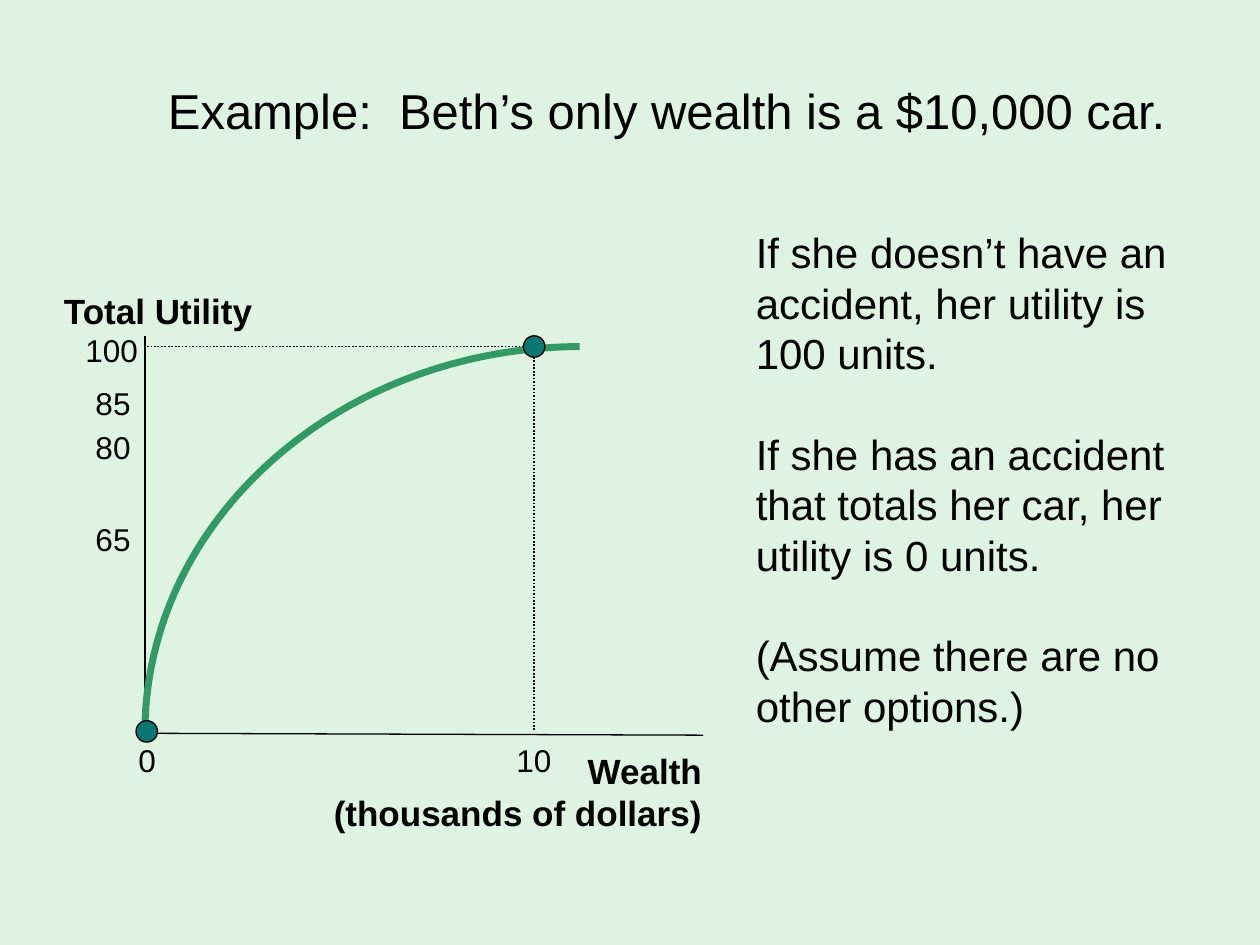
import pptx
import pptx.dml.color
import pptx.enum.dml
import pptx.enum.shapes
import pptx.enum.text
import pptx.oxml
import pptx.util

RGBColor = pptx.dml.color.RGBColor
Align = pptx.enum.text.PP_ALIGN
Anchor = pptx.enum.text.MSO_ANCHOR
Pt = pptx.util.Pt

BACKGROUND = RGBColor(0xDF, 0xF3, 0xE2)
BLACK = RGBColor(0x00, 0x00, 0x00)
CURVE_GREEN = RGBColor(0x33, 0x99, 0x66)
DOT_TEAL = RGBColor(0x0C, 0x76, 0x73)

FONT = "Arial"
LINE_HEIGHT = 1.2
WIDTH = pptx.util.Inches(10)
HEIGHT = pptx.util.Inches(7.5)
DOT_SIZE = pptx.util.Inches(0.17)
CURVE_STEPS = 80

AXIS_X, AXIS_TOP, AXIS_BOTTOM = 11.5, 35.6, 77.6
WEALTH_X, UTILITY_Y = 42.4, 36.67


def across(percent):
    return round(WIDTH * percent / 100)


def down(percent):
    return round(HEIGHT * percent / 100)


def add_text(slide, text, left, top, width, height, *, size, bold=False,
             align=Align.LEFT, anchor=Anchor.TOP, gap=0):
    box = slide.shapes.add_textbox(across(left), down(top), across(width), down(height))
    frame = box.text_frame
    frame.word_wrap = True
    frame.vertical_anchor = anchor
    for index, content in enumerate(text.split("\n")):
        paragraph = frame.add_paragraph() if index else frame.paragraphs[0]
        paragraph.text = content
        paragraph.alignment = align
        paragraph.line_spacing = Pt(size * LINE_HEIGHT)
        if index:
            paragraph.space_before = Pt(gap)
        for run in paragraph.runs:
            run.font.name = FONT
            run.font.size = Pt(size)
            run.font.bold = bold
            run.font.color.rgb = BLACK


def add_line(slide, start, end, *, weight, dash=None):
    line = slide.shapes.add_connector(
        pptx.enum.shapes.MSO_CONNECTOR.STRAIGHT,
        across(start[0]), down(start[1]), across(end[0]), down(end[1]))
    line.line.color.rgb = BLACK
    line.line.width = Pt(weight)
    if dash:
        line.line.dash_style = dash
    properties = line._element.spPr
    properties.append(properties.makeelement(pptx.oxml.ns.qn("a:effectLst"), {}))


def add_dot(slide, x, y):
    dot = slide.shapes.add_shape(
        pptx.enum.shapes.MSO_SHAPE.OVAL,
        across(x) - DOT_SIZE // 2, down(y) - DOT_SIZE // 2, DOT_SIZE, DOT_SIZE)
    dot.shadow.inherit = False
    dot.fill.solid()
    dot.fill.fore_color.rgb = DOT_TEAL
    dot.line.color.rgb = BLACK
    dot.line.width = Pt(0.75)


def bezier(controls, t):
    weights = ((1 - t) ** 3, 3 * t * (1 - t) ** 2, 3 * t ** 2 * (1 - t), t ** 3)
    x = sum(weight * point[0] for weight, point in zip(weights, controls))
    y = sum(weight * point[1] for weight, point in zip(weights, controls))
    return across(x), down(y)


def add_curve(slide, controls):
    points = [bezier(controls, step / CURVE_STEPS) for step in range(CURVE_STEPS + 1)]
    builder = slide.shapes.build_freeform(*points[0])
    builder.add_line_segments(points[1:], close=False)
    curve = builder.convert_to_shape()
    curve.shadow.inherit = False
    curve.fill.background()
    curve.line.color.rgb = CURVE_GREEN
    curve.line.width = Pt(4)


def add_graph(slide):
    origin = (AXIS_X, AXIS_BOTTOM)
    add_line(slide, (AXIS_X, AXIS_TOP), origin, weight=0.75)
    add_line(slide, origin, (55.8, 77.8), weight=0.75)
    add_curve(slide, [(46, UTILITY_Y), (26.9, 36.8), (AXIS_X, 55.07), origin])

    no_accident = (WEALTH_X, UTILITY_Y)
    for end in ((WEALTH_X, 77.2), (AXIS_X, UTILITY_Y)):
        add_line(slide, no_accident, end, weight=1,
                 dash=pptx.enum.dml.MSO_LINE.ROUND_DOT)
    add_dot(slide, 11.65, 77.4)
    add_dot(slide, *no_accident)

    add_text(slide, "Total Utility", 4.1, 30, 20, 5.7, size=20, bold=True)
    add_text(slide, "Wealth\v(thousands of dollars)", 24.1, 78.67, 32.6, 10.2,
             size=20, bold=True, align=Align.RIGHT)
    for label, left, top in (("100", 5.8, 34.4), ("85", 6.6, 40),
                             ("80", 6.6, 44.67), ("65", 6.6, 54.4)):
        add_text(slide, label, left, top, 6.7, 5.3, size=18)
    for label, left, width in (("0", 10, 4.2), ("10", 40, 4.9)):
        add_text(slide, label, left, 77.8, width, 5.3, size=18)


def main():
    presentation = pptx.Presentation()
    presentation.slide_width = WIDTH
    presentation.slide_height = HEIGHT
    slide = presentation.slides.add_slide(presentation.slide_layouts[6])
    slide.background.fill.solid()
    slide.background.fill.fore_color.rgb = BACKGROUND

    add_text(slide, "Example:  Beth’s only wealth is a $10,000 car.",
             7.5, 3.33, 90.8, 16.67, size=28, align=Align.CENTER, anchor=Anchor.MIDDLE)
    add_graph(slide)
    add_text(slide,
             "If she doesn’t have an accident, her utility is 100 units.\n"
             "If she has an accident that totals her car, her utility is 0 units.\n"
             "(Assume there are no other options.)",
             59, 23.33, 39.3, 55.2, size=24, gap=24 * LINE_HEIGHT)

    presentation.save("out.pptx")


if __name__ == "__main__":
    main()
